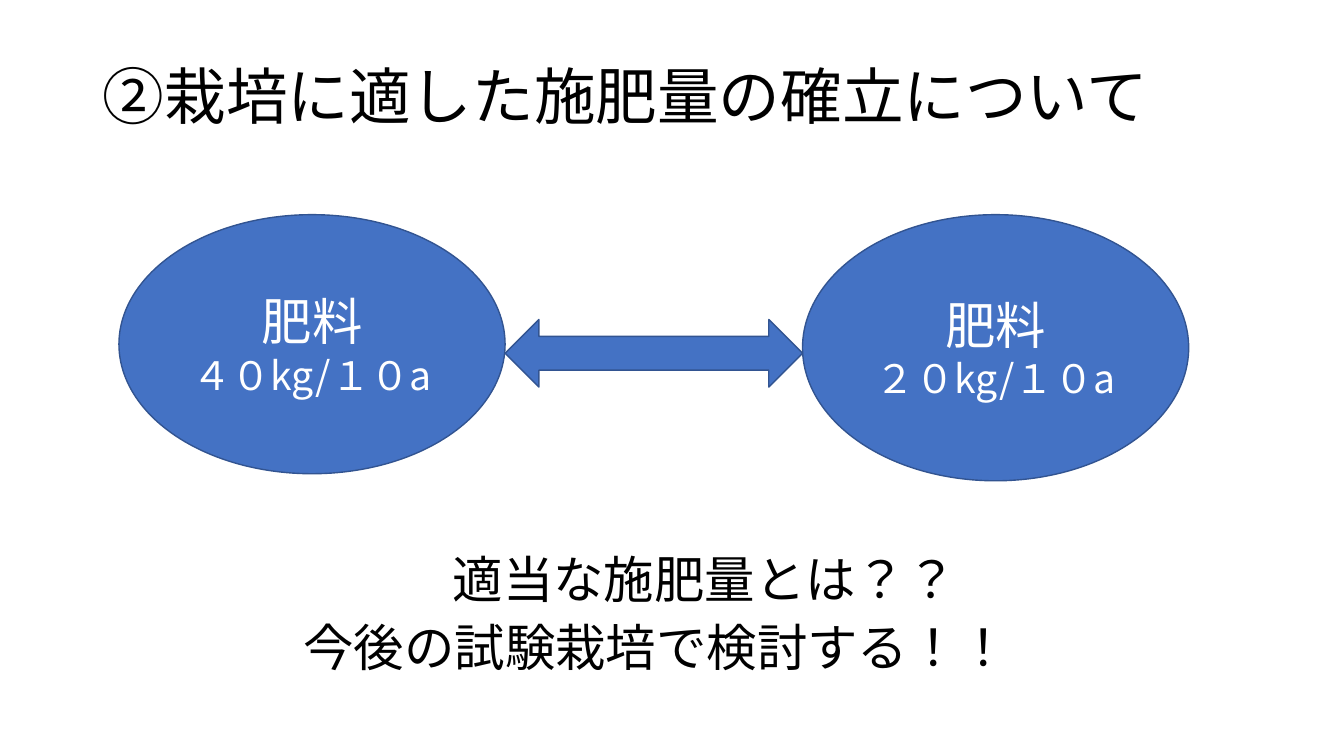
"""Build the slide that compares two fertilizer rates."""
import pptx
import pptx.dml.color
import pptx.enum.lang
import pptx.enum.shapes
import pptx.enum.text
import pptx.oxml
import pptx.oxml.ns
import pptx.util

Inches, Pt = pptx.util.Inches, pptx.util.Pt
RGBColor = pptx.dml.color.RGBColor
Shape = pptx.enum.shapes.MSO_SHAPE
Align = pptx.enum.text.PP_ALIGN
Anchor = pptx.enum.text.MSO_ANCHOR

BLACK = RGBColor(0x00, 0x00, 0x00)
WHITE = RGBColor(0xFF, 0xFF, 0xFF)
BLUE = RGBColor(0x44, 0x72, 0xC4)
NAVY = RGBColor(0x32, 0x54, 0x91)
FONT = "Noto Sans CJK JP"

TITLE = "②栽培に適した施肥量の確立について"
RATES = [("肥料", "４０kg/１０a", 2.57), ("肥料", "２０kg/１０a", 2.64)]
CONCLUSION = [("適当な施肥量とは？？", 1.48), ("今後の試験栽培で検討する！！", 0)]

WIDTH, HEIGHT = 13.33, 7.5
OVAL_LEFT, OVAL_TOP, OVAL_WIDTH = 1.18, 2.13, 3.83
ARROW_WIDTH, ARROW_HEIGHT = 2.95, 0.67
ARROW_LEFT = OVAL_LEFT + OVAL_WIDTH
ARROW_TOP = 3.17


def place(box, left, top, width, height):
    spots = dict(left=left, top=top, width=width, height=height)
    for name, value in spots.items():
        setattr(box, name, Inches(value))


def write(para, text, size, color, latin=FONT, **layout):
    for name, value in layout.items():
        setattr(para, name, value)
    span = para.add_run()
    span.text = text
    looks = dict(name=latin, size=Pt(size), language_id=pptx.enum.lang.MSO_LANGUAGE_ID.JAPANESE)
    for name, value in looks.items():
        setattr(span.font, name, value)
    span.font.color.rgb = color
    east_asian = pptx.oxml.parse_xml(f'<a:ea {pptx.oxml.ns.nsdecls("a")} typeface="{FONT}"/>')
    span.font._element.find(pptx.oxml.ns.qn("a:latin")).addnext(east_asian)


def add_blue_shape(page, kind, *spot):
    shape = page.shapes.add_shape(kind, *map(Inches, spot))
    shape.shadow.inherit = False
    shape.fill.solid()
    shape.fill.fore_color.rgb = BLUE
    shape.line.color.rgb = NAVY
    shape.line.width = Pt(1)
    return shape


def add_title(page):
    title = page.shapes.title
    place(title, 0.92, 0.26, 11.5, 1.45)
    frame = title.text_frame
    settings = dict(word_wrap=True, vertical_anchor=Anchor.MIDDLE,
                    auto_size=pptx.enum.text.MSO_AUTO_SIZE.NONE)
    for name, value in settings.items():
        setattr(frame, name, value)
    write(frame.paragraphs[0], TITLE, 44, BLACK, "Arial", alignment=Align.LEFT, line_spacing=0.9)


def add_rates(page):
    for column, (name, rate, height) in enumerate(RATES):
        left = OVAL_LEFT + column * (OVAL_WIDTH + ARROW_WIDTH)
        oval = add_blue_shape(page, Shape.OVAL, left, OVAL_TOP, OVAL_WIDTH, height)
        frame = oval.text_frame
        frame.vertical_anchor = Anchor.MIDDLE
        write(frame.paragraphs[0], name, 36, WHITE, alignment=Align.CENTER)
        write(frame.add_paragraph(), rate, 28, WHITE, alignment=Align.CENTER)
    add_blue_shape(page, Shape.LEFT_RIGHT_ARROW, ARROW_LEFT, ARROW_TOP, ARROW_WIDTH, ARROW_HEIGHT)


def add_conclusion(page):
    box = page.shapes.add_textbox(*map(Inches, (3.01, 5.36, 9.4, 1.4)))
    frame = box.text_frame
    frame.word_wrap = True
    for side in ("left", "top", "right", "bottom"):
        setattr(frame, f"margin_{side}", 0)
    for row, (text, indent) in enumerate(CONCLUSION):
        para = frame.add_paragraph() if row else frame.paragraphs[0]
        write(para, text, 36, BLACK, line_spacing=Pt(48.6))
        para._p.get_or_add_pPr().set("marL", str(Inches(indent)))


def main():
    deck = pptx.Presentation()
    deck.slide_width, deck.slide_height = Inches(WIDTH), Inches(HEIGHT)
    page = deck.slides.add_slide(deck.slide_layouts.get_by_name("Title Only"))
    add_title(page)
    add_rates(page)
    add_conclusion(page)
    deck.save("out.pptx")


if __name__ == "__main__":
    main()
